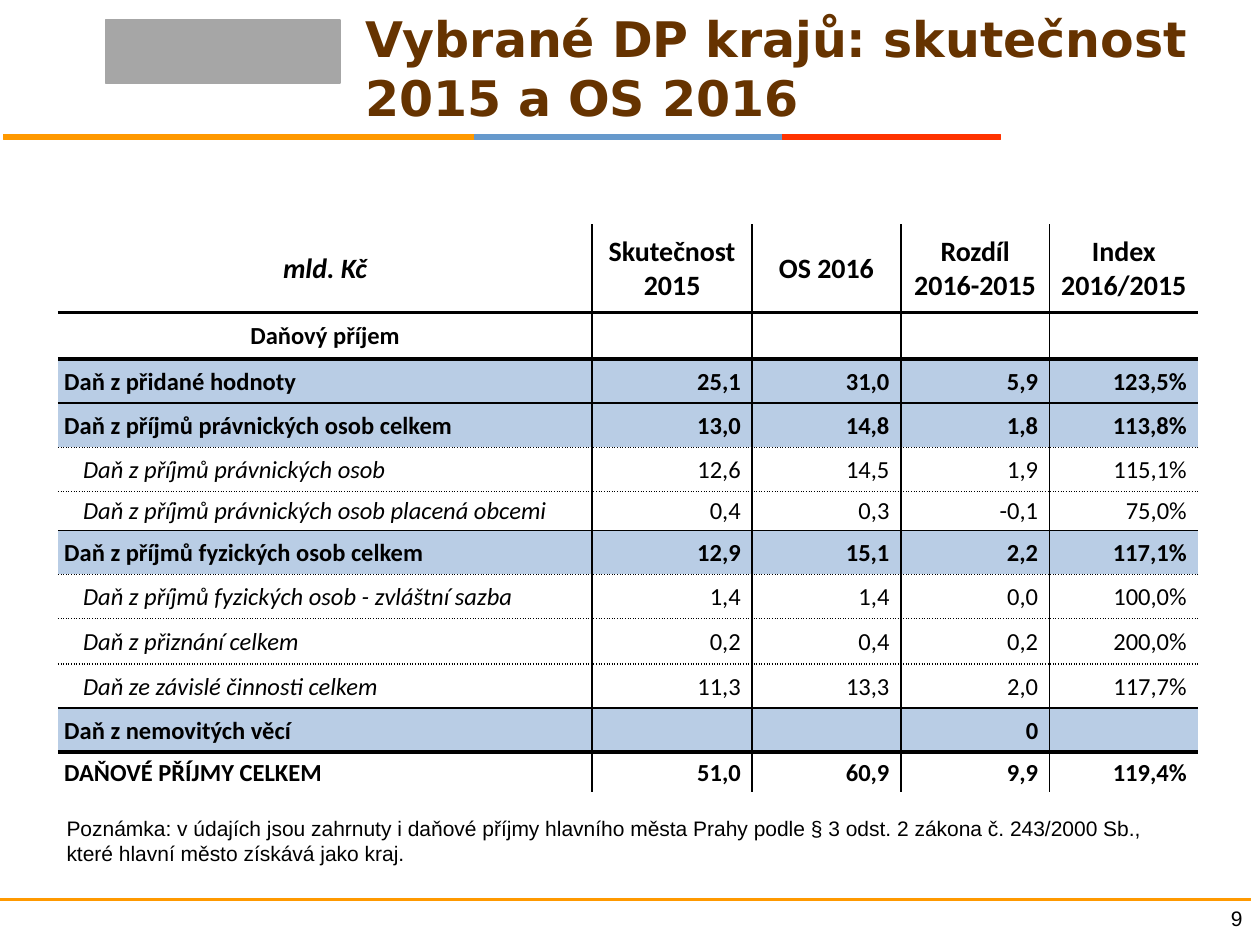
from lxml.etree import SubElement
from pptx import Presentation
from pptx.dml.color import RGBColor
from pptx.enum.shapes import MSO_CONNECTOR, MSO_SHAPE
from pptx.enum.text import MSO_ANCHOR, PP_ALIGN
from pptx.oxml.ns import qn
from pptx.util import Inches, Pt

BLACK = RGBColor(0x00, 0x00, 0x00)
GREY = RGBColor(0xA6, 0xA6, 0xA6)
BROWN = RGBColor(0x66, 0x33, 0x00)
ORANGE = RGBColor(0xFF, 0x99, 0x00)
BLUE = RGBColor(0x66, 0x99, 0xCC)
RED = RGBColor(0xFF, 0x33, 0x00)
LIGHT_BLUE = RGBColor(0xB9, 0xCD, 0xE5)

THIN = (1, "solid")
THICK = (2.25, "solid")
DOTTED = (1, "sysDot")

COLUMN_WIDTHS = [4.24, 1.27, 1.18, 1.18, 1.18]
TAX_ROWS = [
    ("header", 0.7, THICK, ["mld. Kč", "Skutečnost\v2015", "OS 2016", "Rozdíl\v2016-2015", "Index\n2016/2015"]),
    ("section", 0.37, THICK, ["Daňový příjem", "", "", "", ""]),
    ("group", 0.35, THIN, ["Daň z přidané hodnoty", "25,1", "31,0", "5,9", "123,5%"]),
    ("group", 0.35, DOTTED, ["Daň z příjmů právnických osob celkem", "13,0", "14,8", "1,8", "113,8%"]),
    ("detail", 0.35, DOTTED, ["Daň z příjmů právnických osob", "12,6", "14,5", "1,9", "115,1%"]),
    ("detail", 0.31, THIN, ["Daň z příjmů právnických osob placená obcemi", "0,4", "0,3", "-0,1", "75,0%"]),
    ("group", 0.35, DOTTED, ["Daň z příjmů fyzických osob celkem", "12,9", "15,1", "2,2", "117,1%"]),
    ("detail", 0.35, DOTTED, ["Daň z příjmů fyzických osob - zvláštní sazba", "1,4", "1,4", "0,0", "100,0%"]),
    ("detail", 0.36, DOTTED, ["Daň z přiznání celkem", "0,2", "0,4", "0,2", "200,0%"]),
    ("detail", 0.35, THIN, ["Daň ze závislé činnosti celkem", "11,3", "13,3", "2,0", "117,7%"]),
    ("group", 0.35, THICK, ["Daň z nemovitých věcí", "", "", "0", ""]),
    ("total", 0.32, None, ["DAŇOVÉ PŘÍJMY CELKEM", "51,0", "60,9", "9,9", "119,4%"]),
]
LABEL_INSETS = {"header": 0.01, "section": 0.01, "group": 0.05, "total": 0.05, "detail": 0.2}


def add_span(para, text, font, size, color=BLACK, bold=False, italic=False):
    span = para.add_run()
    span.text = text
    span.font.name = font
    span.font.size = Pt(size)
    span.font.color.rgb = color
    span.font.bold = bold
    span.font.italic = italic


def add_text(page, area, text, font, size, color=BLACK, bold=False, align=PP_ALIGN.LEFT, anchor=MSO_ANCHOR.TOP):
    box = page.shapes.add_textbox(*map(Inches, area))
    frame = box.text_frame
    frame.word_wrap = True
    frame.vertical_anchor = anchor
    para = frame.paragraphs[0]
    para.alignment = align
    add_span(para, text, font, size, color, bold)


def add_bar(page, area, color):
    bar = page.shapes.add_shape(MSO_SHAPE.RECTANGLE, *map(Inches, area))
    bar.shadow.inherit = False
    bar.fill.solid()
    bar.fill.fore_color.rgb = color
    bar.line.color.rgb = color
    bar.line.width = Pt(0.75)


def add_header(page, left, top, width, height):
    add_bar(page, (left + 0.84, top + 0.16, 1.86, 0.5), GREY)
    add_text(page, (left + 2.8, top, width - 3.07, height), "Vybrané DP krajů: skutečnost 2015 a OS 2016",
             "DejaVu Sans", 28, BROWN, bold=True, anchor=MSO_ANCHOR.MIDDLE)


def add_stripe(page, left, top, height):
    for width, color in ((3.74, ORANGE), (2.44, BLUE), (1.73, RED)):
        add_bar(page, (left, top, width, height), color)
        left += width


def add_border(cell, side, border):
    width, dash = border or (0, None)
    line = SubElement(cell._tc.get_or_add_tcPr(), qn(f"a:ln{side}"), w=str(Pt(width)))
    if border is None:
        SubElement(line, qn("a:noFill"))
        return
    fill = SubElement(line, qn("a:solidFill"))
    SubElement(fill, qn("a:srgbClr"), val=str(BLACK))
    SubElement(line, qn("a:prstDash"), val=dash)


def fill_cell(cell, text, kind, is_label):
    centred = kind in ("header", "section")
    cell.vertical_anchor = MSO_ANCHOR.MIDDLE
    cell.margin_left = Inches(LABEL_INSETS[kind] if is_label else 0.01)
    cell.margin_right = Inches(0.01 if is_label or centred else 0.09)
    cell.margin_top = Inches(0.01)
    cell.margin_bottom = Inches(0)
    if kind == "group":
        cell.fill.solid()
        cell.fill.fore_color.rgb = LIGHT_BLUE
    else:
        cell.fill.background()
    if not text:
        return
    for index, block in enumerate(text.split("\n")):
        para = cell.text_frame.add_paragraph() if index else cell.text_frame.paragraphs[0]
        if centred:
            para.alignment = PP_ALIGN.CENTER
        else:
            para.alignment = PP_ALIGN.LEFT if is_label else PP_ALIGN.RIGHT
        for position, line in enumerate(block.split("\v")):
            if position:
                para.add_line_break()
            add_span(para, line, "Calibri", 16 if kind == "header" else 14, bold=kind != "detail",
                     italic=is_label and kind in ("header", "detail"))


def add_tax_table(page, left, top, width, height):
    table = page.shapes.add_table(len(TAX_ROWS), len(COLUMN_WIDTHS), Inches(left), Inches(top),
                                  Inches(width), Inches(height)).table
    table.first_row = False
    table.horz_banding = False
    for column, column_width in zip(table.columns, COLUMN_WIDTHS):
        column.width = Inches(column_width)
    last = len(COLUMN_WIDTHS) - 1
    above = None
    for row, (kind, row_height, below, texts) in zip(table.rows, TAX_ROWS):
        row.height = Inches(row_height)
        for index, (cell, text) in enumerate(zip(row.cells, texts)):
            add_border(cell, "L", THIN if index else None)
            add_border(cell, "R", THIN if index < last else None)
            add_border(cell, "T", above)
            add_border(cell, "B", below)
            fill_cell(cell, text, kind, index == 0)
        above = below


def add_footer(page, left, top, width):
    rule = page.shapes.add_connector(MSO_CONNECTOR.STRAIGHT, Inches(left), Inches(top),
                                     Inches(left + width), Inches(top))
    rule.line.color.rgb = ORANGE
    rule.line.width = Pt(2)
    SubElement(rule._element.spPr, qn("a:effectLst"))
    add_text(page, (left + width - 0.44, top, 0.47, 0.3), "9", "Arial", 12, align=PP_ALIGN.RIGHT)


def main():
    deck = Presentation()
    deck.slide_width = Inches(10)
    deck.slide_height = Inches(7.5)
    page = deck.slides.add_slide(deck.slide_layouts[6])
    add_header(page, 0, 0, 10, 1.07)
    add_stripe(page, 0.03, 1.07, 0.04)
    add_tax_table(page, 0.46, 1.78, 9.06, 4.49)
    add_text(page, (0.43, 6.42, 9.06, 0.5),
             "Poznámka: v údajích jsou zahrnuty i daňové příjmy hlavního města Prahy podle § 3 odst. 2 "
             "zákona č. 243/2000 Sb., které hlavní město získává jako kraj.", "Arial", 12)
    add_footer(page, 0, 7.14, 9.93)
    deck.save("out.pptx")


if __name__ == "__main__":
    main()
